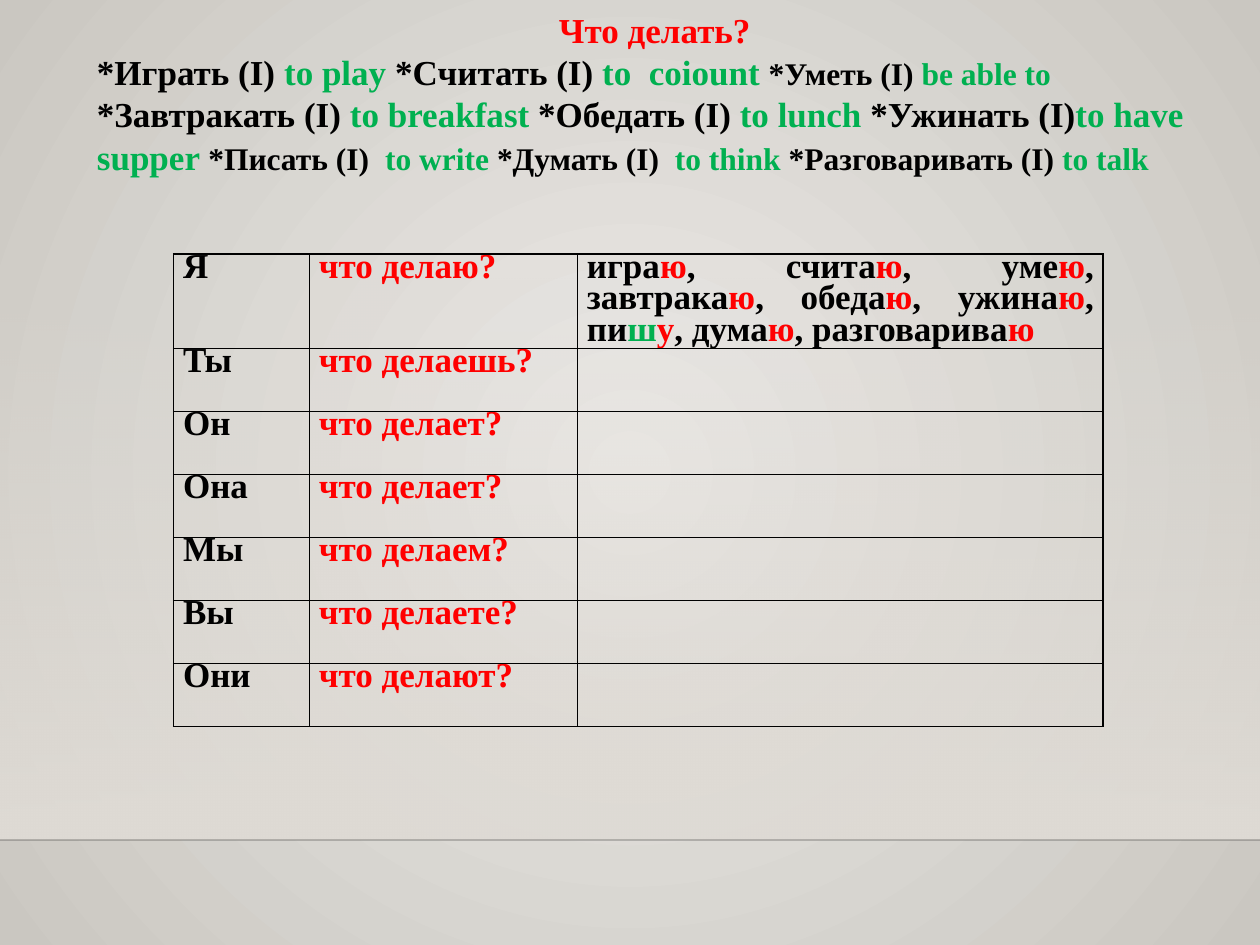
from lxml.etree import SubElement
from pptx import Presentation
from pptx.dml.color import RGBColor
from pptx.enum.shapes import MSO_CONNECTOR, MSO_SHAPE
from pptx.enum.text import MSO_ANCHOR, MSO_AUTO_SIZE, PP_ALIGN
from pptx.oxml.ns import qn
from pptx.util import Pt

BLACK = RGBColor(0x00, 0x00, 0x00)
RED = RGBColor(0xFF, 0x00, 0x00)
GREEN = RGBColor(0x00, 0xB0, 0x50)
CENTRE = RGBColor(0xEC, 0xEA, 0xE7)
EDGE = RGBColor(0xCA, 0xC7, 0xC1)
HAZE = RGBColor(0xDF, 0xDB, 0xD5)
FONT = "Times New Roman"
WIDTH, HEIGHT = 720, 540

VERBS = [
    ("*Играть (I) ", "to play ", 20),
    ("*Считать (I) ", "to \u00a0coiount ", 20),
    ("*Уметь (I) ", "be able to ", 18),
    ("*Завтракать (I) ", "to breakfast ", 20),
    ("*Обедать (I) ", "to lunch ", 20),
    ("*Ужинать (I)", "to have supper ", 20),
    ("*Писать (I)  ", "to write ", 18),
    ("*Думать (I)  ", "to think ", 18),
    ("*Разговаривать (I) ", "to talk", 18),
]
QUESTIONS = [
    ("Я", "что делаю?"),
    ("Ты", "что делаешь?"),
    ("Он", "что делает?"),
    ("Она", "что делает?"),
    ("Мы", "что делаем?"),
    ("Вы", "что делаете?"),
    ("Они", "что делают?"),
]
# Each stem with its ending; the last part is red
FORMS = ["игра|ю", ", счита|ю", ", уме|ю", ", завтрака|ю", ", обеда|ю",
         ", ужина|ю", ", пи|ш|у", ", дума|ю", ", разговарива|ю"]


def add_run(p, text, size=20, color=BLACK, bold=True):
    r = p.add_run()
    r.text = text
    r.font.name = FONT
    r.font.size = Pt(size)
    r.font.bold = bold
    r.font.color.rgb = color


def set_stops(fill, *colors):
    fill.gradient()
    for stop, color in zip(fill.gradient_stops, colors):
        stop.color.rgb = color


def set_alpha(color_element, percent):
    SubElement(color_element, qn("a:alpha"), val=str(percent * 1000))


def paint_background(s):
    """Radial gradient from the middle of the slide."""
    set_stops(s.background.fill, CENTRE, EDGE)
    grad = s.element.find(".//" + qn("a:gradFill"))
    grad.remove(grad.find(qn("a:lin")))
    path = SubElement(grad, qn("a:path"), path="circle")
    SubElement(path, qn("a:fillToRect"), l="50000", t="50000", r="50000", b="50000")


def add_haze(s, x, y, w, h):
    """Band that fades in downwards and ends in a faint line."""
    band = s.shapes.add_shape(MSO_SHAPE.RECTANGLE, Pt(x), Pt(y), Pt(w), Pt(h))
    band.shadow.inherit = False
    band.line.fill.background()
    set_stops(band.fill, HAZE, HAZE)
    grad = band.element.spPr.find(qn("a:gradFill"))
    grad.find(qn("a:lin")).set("ang", "5400000")
    set_alpha(grad.find(".//" + qn("a:srgbClr")), 0)

    line = s.shapes.add_connector(MSO_CONNECTOR.STRAIGHT, Pt(x), Pt(y + h),
                                  Pt(x + w), Pt(y + h))
    line.line.width = Pt(1)
    line.line.color.rgb = BLACK
    set_alpha(line.element.spPr.find(".//" + qn("a:srgbClr")), 20)
    SubElement(line.element.spPr, qn("a:effectLst"))


def fill_title(title, x, y, w, h):
    title.left, title.top, title.width, title.height = Pt(x), Pt(y), Pt(w), Pt(h)
    tf = title.text_frame
    tf.word_wrap = True
    tf.auto_size = MSO_AUTO_SIZE.NONE
    tf.vertical_anchor = MSO_ANCHOR.TOP
    p = tf.paragraphs[0]
    p.alignment = PP_ALIGN.CENTER
    add_run(p, "Что делать?", color=RED)
    p = tf.add_paragraph()
    p.alignment = PP_ALIGN.LEFT
    for verb, meaning, size in VERBS:
        add_run(p, verb, size)
        add_run(p, meaning, size, GREEN)


def add_borders(cell):
    tcPr = cell._tc.get_or_add_tcPr()
    for i, side in enumerate(("a:lnL", "a:lnR", "a:lnT", "a:lnB")):
        ln = tcPr.makeelement(qn(side), {"w": str(Pt(1))})
        SubElement(SubElement(ln, qn("a:solidFill")), qn("a:srgbClr"), val=str(BLACK))
        tcPr.insert(i, ln)


def format_cell(cell):
    cell.margin_left = cell.margin_right = Pt(5.4)
    cell.margin_top = cell.margin_bottom = 0
    cell.fill.background()
    add_borders(cell)
    p = cell.text_frame.paragraphs[0]
    p.alignment = PP_ALIGN.JUSTIFY
    p.line_spacing = Pt(18)
    return p


def add_verb_table(s, x, y, widths, first_height, row_height):
    count = len(QUESTIONS)
    heights = [first_height] + [row_height] * (count - 1)
    table = s.shapes.add_table(count, len(widths), Pt(x), Pt(y),
                               Pt(sum(widths)), Pt(sum(heights))).table
    table.first_row = table.horz_banding = False
    for column, width in zip(table.columns, widths):
        column.width = Pt(width)
    for row, height, (pronoun, question) in zip(table.rows, heights, QUESTIONS):
        row.height = Pt(height)
        who, what, answer = [format_cell(cell) for cell in row.cells]
        add_run(who, pronoun)
        add_run(what, question, color=RED)
        if pronoun == "Я":
            for form in FORMS:
                stem, *changed, ending = form.split("|")
                add_run(answer, stem)
                for letter in changed:
                    add_run(answer, letter, color=GREEN)
                add_run(answer, ending, color=RED)


def main():
    prs = Presentation()
    prs.slide_width, prs.slide_height = Pt(WIDTH), Pt(HEIGHT)
    s = prs.slides.add_slide(prs.slide_layouts[5])
    paint_background(s)
    add_haze(s, 0, 158.5, WIDTH, 321.5)
    add_verb_table(s, 99.2, 145.2, [77.6, 153.2, 300.4], 54, 36)
    fill_title(s.shapes.title, 48.2, 1.5, 652, 128)
    prs.save("out.pptx")


if __name__ == "__main__":
    main()
